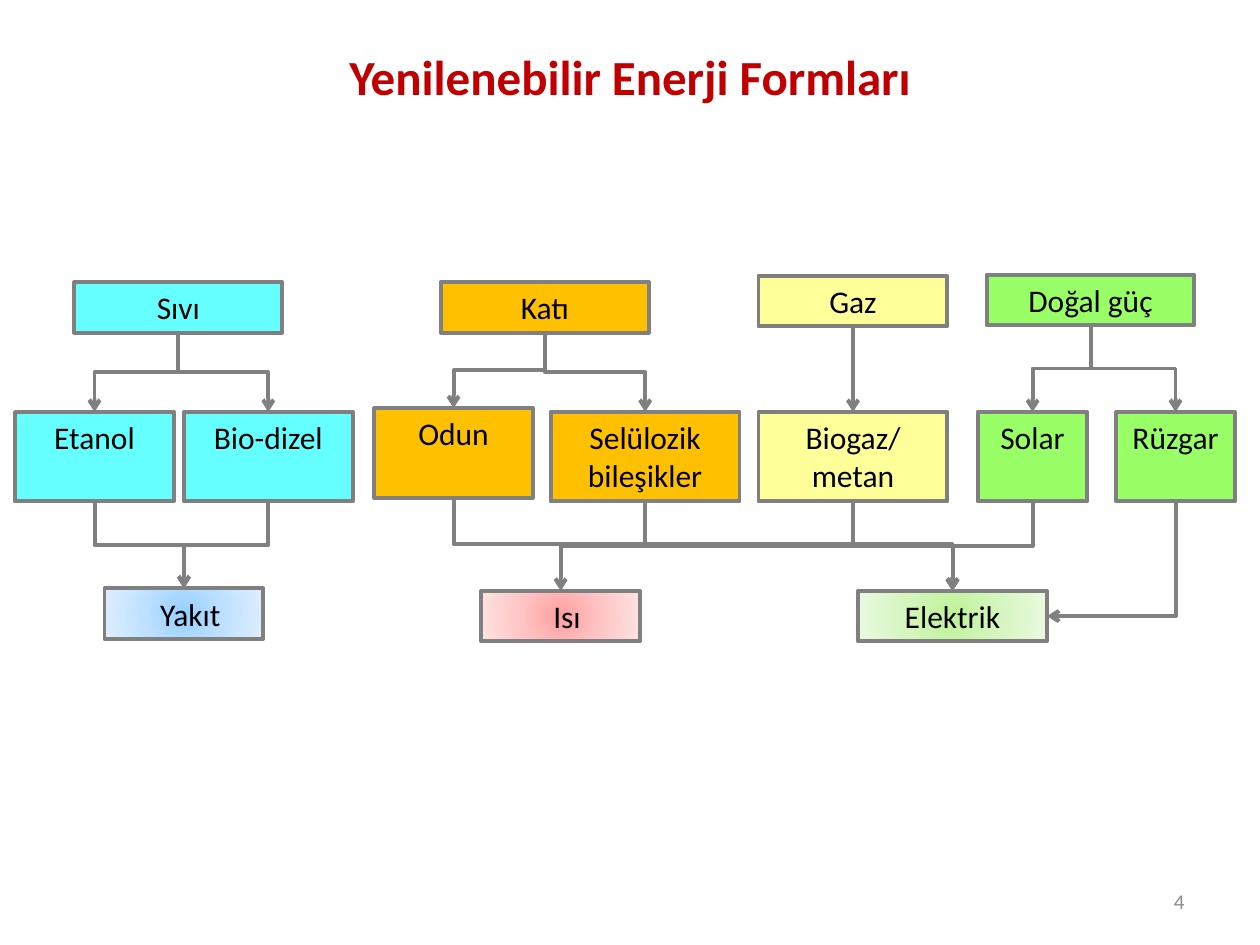
"""Build the slide on forms of renewable energy as a flow chart."""
from dataclasses import dataclass

from lxml import etree
from pptx import Presentation
from pptx.dml.color import RGBColor as RGB
from pptx.enum.shapes import MSO_CONNECTOR as CXN, MSO_SHAPE as SHAPE
from pptx.enum.text import MSO_ANCHOR as ANCHOR, PP_ALIGN as ALIGN
from pptx.oxml import parse_xml
from pptx.oxml.ns import nsdecls, qn
from pptx.util import Inches, Pt


@dataclass(frozen=True)
class Theme:
    font: str = "Calibri"
    title: str = "C00000"
    text: str = "000000"
    number: str = "8C8C8C"
    line: str = "808080"
    thin_line: str = "4B7EBC"
    liquid: str = "66FFFF"
    solid: str = "FFC000"
    gas: str = "FFFF99"
    natural: str = "99FF66"
    fuel: tuple = ("96D0FF", "BFE1FF", "E0EFFF")
    heat: tuple = ("FFA0A0", "FFC5C5", "FFE3E3")
    power: tuple = ("BEF297", "D5F6C0", "EAFAE0")
    title_size: float = 28
    box_size: float = 18
    number_size: float = 12
    line_width: float = 2.25
    thin_width: float = 0.75


T = Theme()


def write(tf, lines, size, color, align=ALIGN.CENTER, bold=False):
    tf.word_wrap = True
    for i, line in enumerate(lines):
        p = tf.add_paragraph() if i else tf.paragraphs[0]
        p.alignment = align
        r = p.add_run()
        r.text = line
        r.font.name, r.font.size, r.font.bold = T.font, Pt(size), bold
        r.font.color.rgb = RGB.from_string(color)


def radial(colors):
    stops = "".join(
        f'<a:gs pos="{i * 50000}"><a:srgbClr val="{c}"/></a:gs>' for i, c in enumerate(colors))
    return parse_xml(
        f'<a:gradFill {nsdecls("a")} rotWithShape="1"><a:gsLst>{stops}</a:gsLst>'
        '<a:path path="circle"><a:fillToRect l="50000" t="50000" r="50000" b="50000"/>'
        '</a:path></a:gradFill>')


prs = Presentation()
prs.slide_width, prs.slide_height = Inches(10), Inches(7.5)
s = prs.slides.add_slide(prs.slide_layouts[5])

title = s.shapes.title
title.left, title.top, title.width, title.height = map(Inches, (0.5, 0.3, 9, 0.61))
title.text_frame.vertical_anchor = ANCHOR.MIDDLE
write(title.text_frame, ["Yenilenebilir Enerji Formları"], T.title_size, T.title, bold=True)

LOW, HIGH = 0.4, 0.71
BOXES = [
    ("Gaz", 6.02, 2.19, 1.5, LOW, T.gas),
    ("Doğal güç", 7.83, 2.18, 1.65, LOW, T.natural),
    ("Katı", 3.5, 2.24, 1.65, LOW, T.solid),
    ("Sıvı", 0.59, 2.24, 1.65, LOW, T.liquid),
    ("Etanol", 0.12, 3.27, 1.26, HIGH, T.liquid),
    ("Biogaz/\nmetan", 6.02, 3.27, 1.5, HIGH, T.gas),
    ("Selülozik bileşikler", 4.37, 3.27, 1.5, HIGH, T.solid),
    ("Odun", 2.97, 3.24, 1.26, HIGH, T.solid),
    ("Rüzgar", 8.86, 3.27, 0.94, HIGH, T.natural),
    ("Solar", 7.76, 3.27, 0.87, HIGH, T.natural),
    ("Bio-dizel", 1.46, 3.27, 1.34, HIGH, T.liquid),
    ("Yakıt", 0.83, 4.67, 1.26, LOW, T.fuel),
    ("Isı", 3.82, 4.69, 1.26, LOW, T.heat),
    ("Elektrik", 6.81, 4.69, 1.5, LOW, T.power),
]
boxes = {}
for text, left, top, width, height, fill in BOXES:
    sp = s.shapes.add_shape(SHAPE.RECTANGLE, *map(Inches, (left, top, width, height)))
    sp.shadow.inherit = False
    if isinstance(fill, tuple):
        sp.fill.background()
        sp_pr = sp._element.spPr
        sp_pr.replace(sp_pr.find(qn("a:noFill")), radial(fill))
    else:
        sp.fill.solid()
        sp.fill.fore_color.rgb = RGB.from_string(fill)
    sp.line.color.rgb = RGB.from_string(T.line)
    sp.line.width = Pt(T.line_width)
    tf = sp.text_frame
    tf.vertical_anchor = ANCHOR.TOP
    if text in ("Yakıt", "Isı"):
        tf.margin_left = Inches(0.2)
    lines = text.split("\n")
    write(tf, lines, T.box_size, T.text)
    boxes[lines[0]] = sp

BOTTOM, RIGHT, TOP = 2, 3, 0
LINKS = [
    ("Sıvı", "Etanol"), ("Sıvı", "Bio-dizel"),
    ("Katı", "Odun"), ("Katı", "Selülozik bileşikler"),
    ("Doğal güç", "Solar"), ("Doğal güç", "Rüzgar"),
    ("Gaz", "Biogaz/"),
    ("Etanol", "Yakıt"), ("Bio-dizel", "Yakıt"),
    ("Odun", "Isı"), ("Selülozik bileşikler", "Isı"),
    ("Odun", "Elektrik"), ("Selülozik bileşikler", "Elektrik"),
    ("Biogaz/", "Elektrik"), ("Solar", "Elektrik"), ("Rüzgar", "Elektrik"),
]
for source, target in LINKS:
    a, b = boxes[source], boxes[target]
    sideways = (source, target) == ("Rüzgar", "Elektrik")
    thin = (source, target) == ("Odun", "Isı")
    straight = source == "Gaz"
    cxn = s.shapes.add_connector(CXN.STRAIGHT if straight else CXN.ELBOW, 0, 0, 0, 0)
    cxn.begin_connect(a, BOTTOM)
    cxn.end_connect(b, RIGHT if sideways else TOP)
    sp_pr = cxn._element.spPr
    if not straight:
        x1, y1, x2, y2 = cxn.begin_x, cxn.begin_y, cxn.end_x, cxn.end_y
        across, down = abs(x2 - x1), y2 - y1
        cxn.left, cxn.top = (x1 + x2 - down) // 2, (y1 + y2 - across) // 2
        cxn.width, cxn.height = down, across
        xfrm = sp_pr.find(qn("a:xfrm"))
        xfrm.set("rot", "16200000" if x2 > x1 else "5400000")
        xfrm.set("flipH", "1" if x2 > x1 else "0")
    if sideways:
        sp_pr.find(qn("a:prstGeom")).set("prst", "bentConnector2")
    cxn.line.color.rgb = RGB.from_string(T.thin_line if thin else T.line)
    cxn.line.width = Pt(T.thin_width if thin else T.line_width)
    etree.SubElement(sp_pr.find(qn("a:ln")), qn("a:tailEnd"), type="arrow")
    etree.SubElement(sp_pr, qn("a:effectLst"))

number = s.shapes.add_textbox(*map(Inches, (7.17, 6.95, 2.33, 0.4)))
number.text_frame.vertical_anchor = ANCHOR.MIDDLE
write(number.text_frame, ["4"], T.number_size, T.number, ALIGN.RIGHT)

prs.save("out.pptx")
